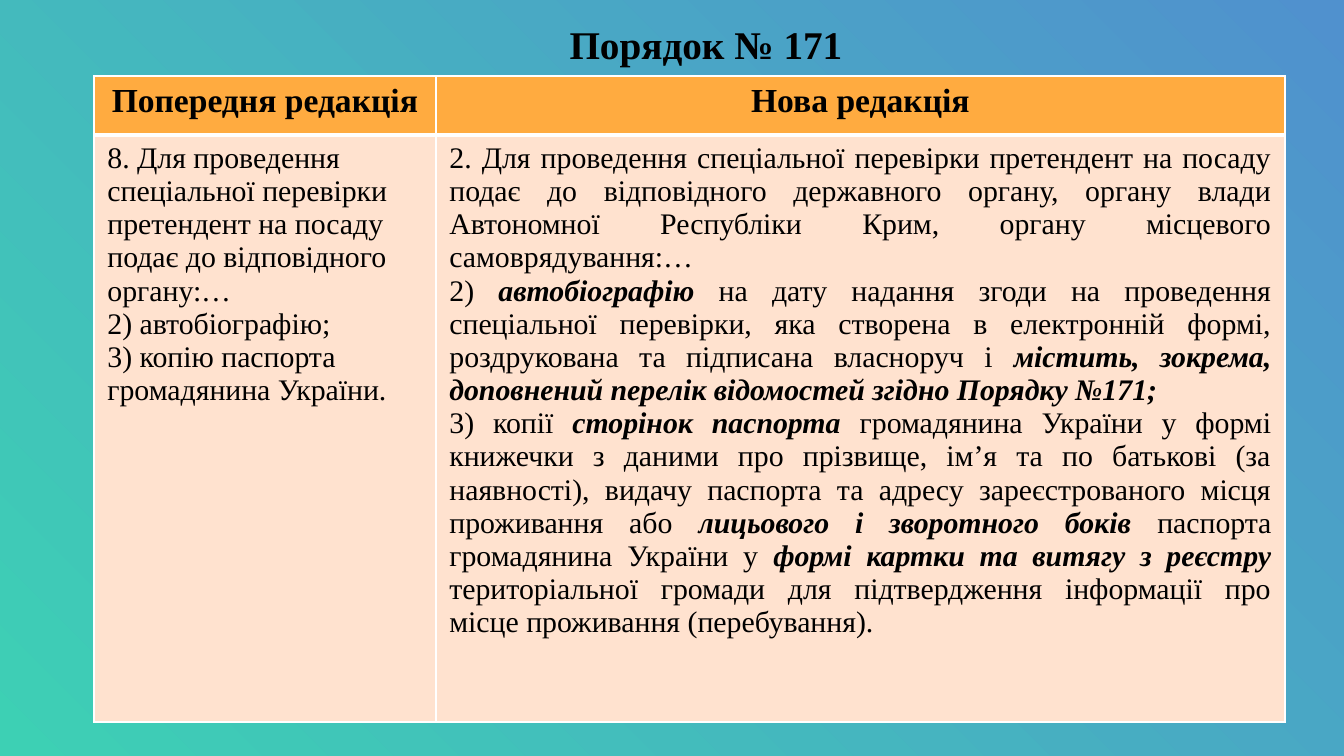
import dataclasses

import lxml.etree
import pptx
import pptx.dml.color
import pptx.enum.text
import pptx.oxml.ns
import pptx.util

SCALE = 914400 / 134.4  # EMU in one px
FONT = "Times New Roman"
BLACK, WHITE = "000000", "FFFFFF"
ORANGE, PEACH = "FFAB40", "FFE2CF"
TEAL, BLUE = "3DD0B4", "5091CE"
ALIGN = pptx.enum.text.PP_ALIGN
ANCHOR = pptx.enum.text.MSO_ANCHOR
qn = pptx.oxml.ns.qn


@dataclasses.dataclass
class Span:
    text: str
    bold: bool = False
    italic: bool = False


@dataclasses.dataclass
class Cell:
    paras: list[list[Span]]
    size: int
    fill: str
    align: ALIGN
    borders: dict[str, int]


def px(length: int) -> pptx.util.Emu:
    return pptx.util.Emu(round(length * SCALE))


def color(value: str) -> pptx.dml.color.RGBColor:
    return pptx.dml.color.RGBColor.from_string(value)


def strong(text: str) -> Span:
    return Span(text, bold=True, italic=True)


def set_values(target, values: dict) -> None:
    for name, value in values.items():
        setattr(target, name, value)


def add_span(para, span: Span, size: int) -> None:
    run = para.add_run()
    run.text = span.text
    set_values(run.font, {"name": FONT, "size": pptx.util.Pt(size),
                          "bold": span.bold, "italic": span.italic})
    run.font.color.rgb = color(BLACK)


def set_background(page) -> None:
    """Gradient that spreads from the bottom left corner."""
    fill = page.background.fill
    fill.gradient()
    for stop, value, position in zip(fill.gradient_stops, (TEAL, BLUE), (0, 1)):
        stop.color.rgb = color(value)
        stop.position = position
    gradient = page.background._cSld.find(".//" + qn("a:gradFill"))
    gradient.remove(gradient.find(qn("a:lin")))
    shade = lxml.etree.SubElement(gradient, qn("a:path"), {"path": "circle"})
    lxml.etree.SubElement(shade, qn("a:fillToRect"), {"t": "100000", "r": "100000"})


def set_title(title, text: str) -> None:
    set_values(title, {"left": px(32), "top": px(0),
                       "width": px(1281), "height": px(86)})
    margins = {f"margin_{side}": px(13) for side in ("left", "top", "right", "bottom")}
    set_values(title.text_frame, {
        **margins, "word_wrap": True, "vertical_anchor": ANCHOR.TOP,
        "auto_size": pptx.enum.text.MSO_AUTO_SIZE.NONE})
    para = title.text_frame.paragraphs[0]
    set_values(para, {"alignment": ALIGN.CENTER, "line_spacing": 1.15,
                      "space_after": pptx.util.Pt(8)})
    set_values_xml = para._p.get_or_add_pPr()
    set_values_xml.set("marL", "0")
    set_values_xml.set("indent", str(px(67)))
    add_span(para, Span(text, bold=True), 21)


def draw_borders(target, borders: dict[str, int]) -> None:
    properties = target._tc.get_or_add_tcPr()
    for index, (side, width) in enumerate(borders.items()):
        line = lxml.etree.Element(qn(f"a:ln{side}"), {"w": str(pptx.util.Pt(width))})
        solid = lxml.etree.SubElement(line, qn("a:solidFill"))
        lxml.etree.SubElement(solid, qn("a:srgbClr"), {"val": WHITE})
        properties.insert(index, line)


def draw_cell(target, cell: Cell) -> None:
    target.fill.solid()
    target.fill.fore_color.rgb = color(cell.fill)
    target.vertical_anchor = ANCHOR.TOP
    draw_borders(target, cell.borders)
    frame = target.text_frame
    for index, spans in enumerate(cell.paras):
        para = frame.add_paragraph() if index else frame.paragraphs[0]
        para.alignment = cell.align
        for span in spans:
            add_span(para, span, cell.size)


def header(text: str) -> Cell:
    return Cell([[Span(text, bold=True)]], 18, ORANGE, ALIGN.CENTER,
                {"L": 1, "R": 1, "T": 1, "B": 3})


def body(paras: list[list[Span]], align: ALIGN) -> Cell:
    return Cell(paras, 16, PEACH, align, {"L": 1, "R": 1, "T": 3, "B": 1})


# Wording of the two versions
OLD_VERSION = [
    [Span("8. Для проведення спеціальної перевірки претендент на посаду подає "
          "до відповідного органу:…")],
    [Span("2) автобіографію;")],
    [Span("3) копію паспорта громадянина України.")],
]
NEW_VERSION = [
    [Span("2. Для проведення спеціальної перевірки претендент на посаду подає до "
          "відповідного державного органу, органу влади Автономної Республіки Крим, "
          "органу місцевого самоврядування:…")],
    [Span("2) "), strong("автобіографію"),
     Span(" на дату надання згоди на проведення спеціальної перевірки, яка створена в "
          "електронній формі, роздрукована та підписана власноруч і "),
     strong("містить, зокрема, доповнений перелік відомостей згідно Порядку №171;")],
    [Span("3) копії "), strong("сторінок паспорта "),
     Span("громадянина України у формі книжечки з даними про прізвище, ім’я та по "
          "батькові (за наявності), видачу паспорта та адресу зареєстрованого місця "
          "проживання або "),
     strong("лицьового і зворотного боків "), Span("паспорта громадянина України у "),
     strong("формі картки та витягу з реєстру "),
     Span("територіальної громади для підтвердження інформації про місце проживання "
          "(перебування).")],
]
ROWS = [
    [header("Попередня редакція"), header("Нова редакція")],
    [body(OLD_VERSION, ALIGN.LEFT), body(NEW_VERSION, ALIGN.JUSTIFY)],
]
COLUMN_WIDTHS, ROW_HEIGHTS = (342, 849), (59, 587)


def main() -> None:
    deck = pptx.Presentation()
    set_values(deck, {"slide_width": px(1344), "slide_height": px(756)})
    page = deck.slides.add_slide(deck.slide_layouts[5])
    set_background(page)
    set_title(page.shapes.title, "Порядок № 171")

    # Comparison table
    table = page.shapes.add_table(
        len(ROWS), len(COLUMN_WIDTHS), px(94), px(76),
        px(sum(COLUMN_WIDTHS)), px(sum(ROW_HEIGHTS))).table
    for column, width in zip(table.columns, COLUMN_WIDTHS):
        column.width = px(width)
    for row, height, cells in zip(table.rows, ROW_HEIGHTS, ROWS):
        row.height = px(height)
        for target, cell in zip(row.cells, cells):
            draw_cell(target, cell)
    deck.save("out.pptx")


if __name__ == "__main__":
    main()
